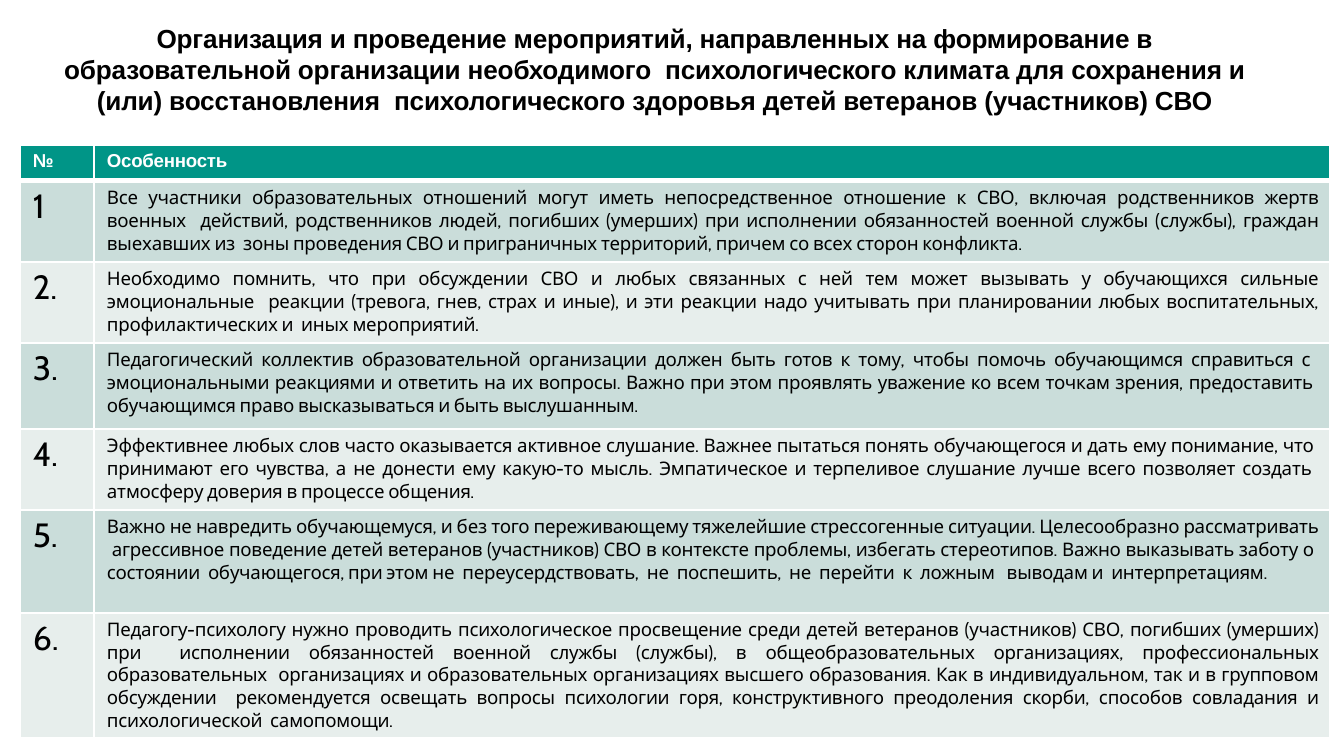
from lxml import etree
from pptx import Presentation
from pptx import util as u
from pptx.dml.color import RGBColor
from pptx.enum import text
from pptx.oxml import ns

COLORS = {"header": "009587", "odd": "CADDDA", "even": "E7EEEC",
          "white": "FFFFFF", "black": "000000"}

TITLE = ("Организация и проведение мероприятий, направленных на формирование в "
         "образовательной организации необходимого  психологического климата для сохранения и "
         "(или) восстановления  психологического здоровья детей ветеранов (участников) СВО")
HEADER = ("№", "Особенность")
FEATURES = [
    ("1", "Все участники образовательных отношений могут иметь непосредственное отношение к СВО, "
          "включая родственников жертв военных  действий, родственников людей, погибших (умерших) "
          "при исполнении обязанностей военной службы (службы), граждан выехавших из  зоны "
          "проведения СВО и приграничных территорий, причем со всех сторон конфликта."),
    ("2.", "Необходимо помнить, что при обсуждении СВО и любых связанных с ней тем может вызывать "
           "у обучающихся сильные эмоциональные  реакции (тревога, гнев, страх и иные), и эти "
           "реакции надо учитывать при планировании любых воспитательных, профилактических и  "
           "иных мероприятий."),
    ("3.", "Педагогический коллектив образовательной организации должен быть готов к тому, чтобы "
           "помочь обучающимся справиться с  эмоциональными реакциями и ответить на их вопросы. "
           "Важно при этом проявлять уважение ко всем точкам зрения, предоставить  обучающимся "
           "право высказываться и быть выслушанным."),
    ("4.", "Эффективнее любых слов часто оказывается активное слушание. Важнее пытаться понять "
           "обучающегося и дать ему понимание, что  принимают его чувства, а не донести ему "
           "какую-то мысль. Эмпатическое и терпеливое слушание лучше всего позволяет создать  "
           "атмосферу доверия в процессе общения."),
    ("5.", "Важно не навредить обучающемуся, и без того переживающему тяжелейшие стрессогенные "
           "ситуации. Целесообразно рассматривать  агрессивное поведение детей ветеранов "
           "(участников) СВО в контексте проблемы, избегать стереотипов. Важно выказывать заботу "
           "о  состоянии  обучающегося, при этом не  переусердствовать,  не  поспешить,  не  "
           "перейти  к  ложным   выводам и  интерпретациям."),
    ("6.", "Педагогу-психологу нужно проводить психологическое просвещение среди детей ветеранов "
           "(участников) СВО, погибших (умерших) при  исполнении обязанностей военной службы "
           "(службы), в общеобразовательных организациях, профессиональных образовательных  "
           "организациях и образовательных организациях высшего образования. Как в "
           "индивидуальном, так и в групповом обсуждении  рекомендуется освещать вопросы "
           "психологии горя, конструктивного преодоления скорби, способов совладания и "
           "психологической  самопомощи."),
]
COLUMN_WIDTHS = (74, 1236)
ROW_HEIGHTS = (36, 81, 81, 86, 81, 103, 125)


def px(length):
    return u.Emu(round(length * 914400 / 134.4))


def write(frame, content, size, font, color, bold, align, before):
    paragraph = frame.paragraphs[0]
    paragraph.text = content
    paragraph.alignment = align
    paragraph.space_before = u.Pt(before)
    run = paragraph.runs[0]
    run.font.size = u.Pt(size)
    run.font.name = font
    run.font.bold = bold
    run.font.color.rgb = RGBColor.from_string(COLORS[color])
    properties = run.font._element
    properties.set("spc", "-10")  # hundredths of a point


def set_borders(cell, widths):
    """Draw white cell borders; widths maps each side (L, R, T, B) to points."""
    properties = cell._tc.get_or_add_tcPr()
    for position, (side, width) in enumerate(widths.items()):
        line = etree.Element(ns.qn(f"a:ln{side}"), w=str(u.Pt(width)))
        fill = etree.SubElement(line, ns.qn("a:solidFill"))
        etree.SubElement(fill, ns.qn("a:srgbClr"), val=COLORS["white"])
        properties.insert(position, line)


def add_title(slide):
    frame = slide.shapes.add_textbox(px(54), px(20), px(1201), px(97)).text_frame
    frame.word_wrap = True
    frame.margin_left = frame.margin_right = frame.margin_bottom = 0
    frame.margin_top = px(2)
    write(frame, TITLE, 14, "Arial", "black", True, text.PP_ALIGN.CENTER, 1.1)


def add_features(slide):
    rows = [HEADER, *FEATURES]
    table = slide.shapes.add_table(len(rows), len(HEADER), px(20), px(145),
                                   px(sum(COLUMN_WIDTHS)), px(sum(ROW_HEIGHTS))).table
    for column, width in zip(table.columns, COLUMN_WIDTHS):
        column.width = px(width)
    for row, height in zip(table.rows, ROW_HEIGHTS):
        row.height = px(height)

    for row, contents in enumerate(rows):
        background = "header" if row == 0 else "odd" if row % 2 else "even"
        for column, content in enumerate(contents):
            cell = table.cell(row, column)
            is_number = row > 0 and column == 0
            cell.margin_left, cell.margin_right = px(13), px(0 if is_number else 12)
            cell.margin_top, cell.margin_bottom = px(5 if is_number else 6), 0
            cell.fill.solid()
            cell.fill.fore_color.rgb = RGBColor.from_string(COLORS[background])
            set_borders(cell, {"L": 1, "R": 1, "T": 3 if row == 1 else 1,
                               "B": 3 if row == 0 else 1})
            if row == 0:
                style = (10, "Arial", "white", True, text.PP_ALIGN.LEFT, 3.3)
            elif is_number:
                style = (18, "Cabin", "black", False, text.PP_ALIGN.LEFT, 3.1)
            else:
                style = (10, "Cabin", "black", False, text.PP_ALIGN.JUSTIFY, 3.4)
            write(cell.text_frame, content, *style)


def main():
    presentation = Presentation()
    presentation.slide_width, presentation.slide_height = px(1344), px(756)
    slide = presentation.slides.add_slide(presentation.slide_layouts[6])
    add_title(slide)
    add_features(slide)
    presentation.save("out.pptx")


if __name__ == "__main__":
    main()
